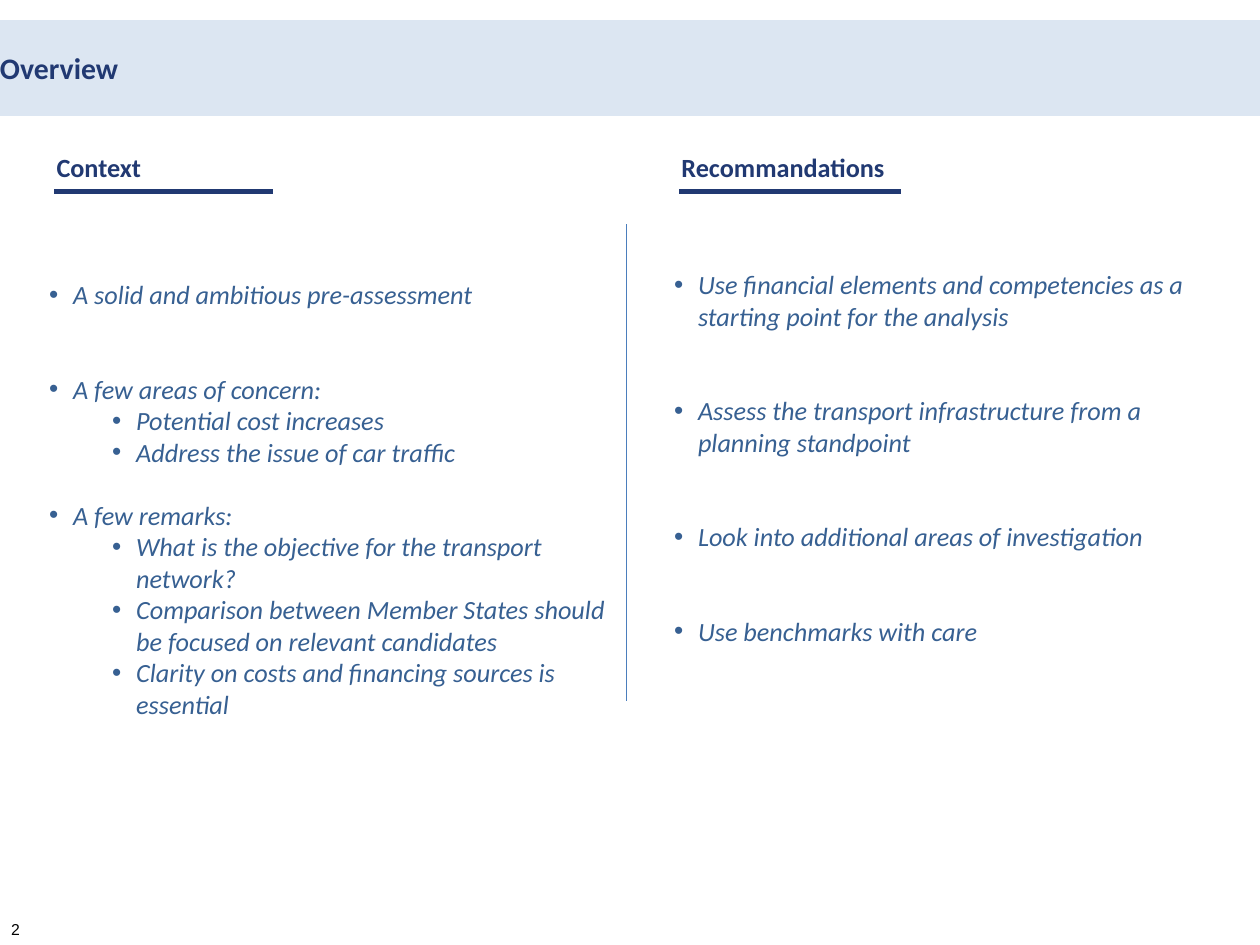
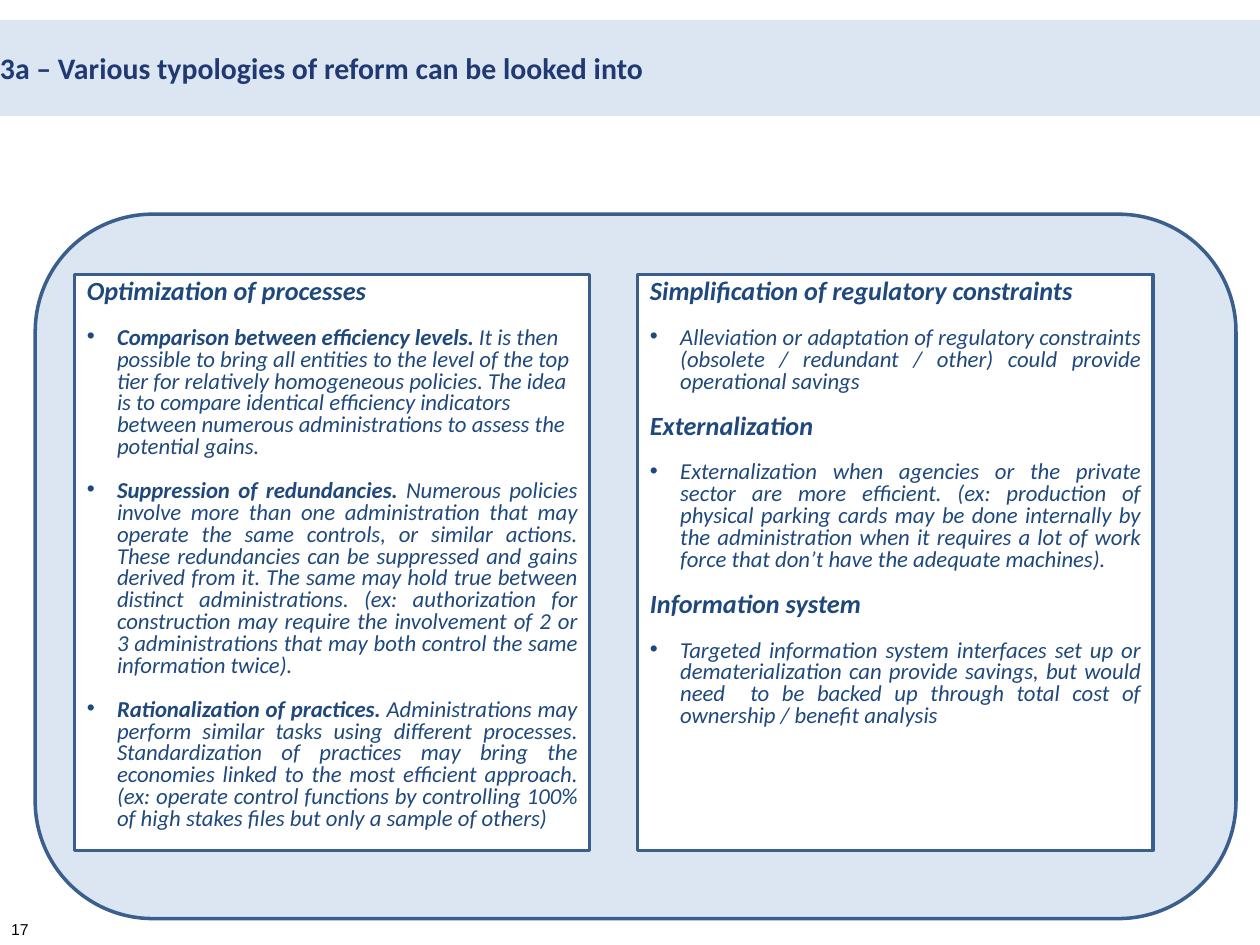
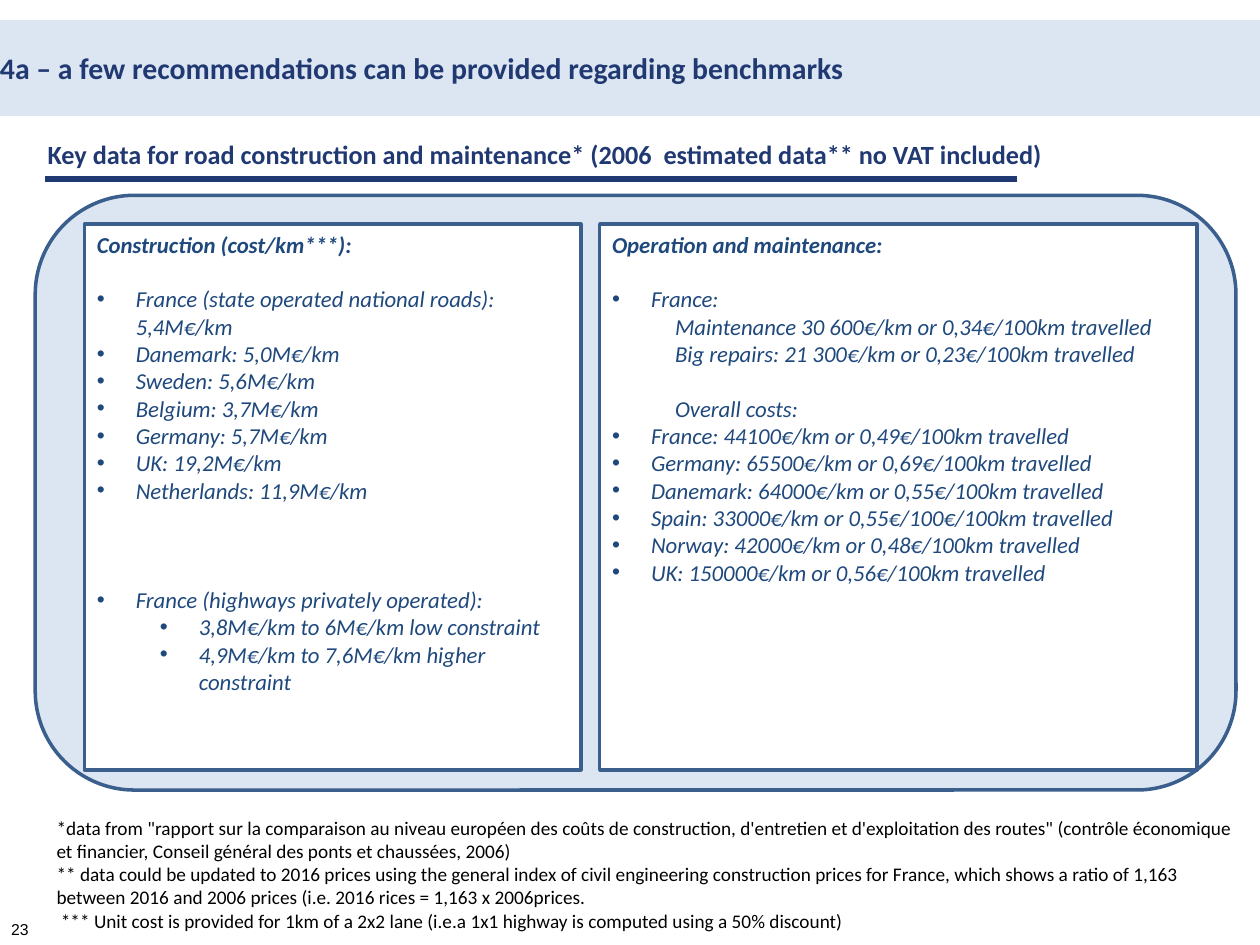
from lxml import etree
from pptx import Presentation
from pptx.dml.color import RGBColor
from pptx.enum import shapes, text
from pptx.oxml.ns import qn
from pptx.util import Inches, Pt

NAVY = RGBColor(0x21, 0x39, 0x72)
PALE_BLUE = RGBColor(0xDC, 0xE6, 0xF2)
OUTLINE = RGBColor(0x3A, 0x5F, 0x8C)
DIVIDER = RGBColor(0x4B, 0x7E, 0xBC)
LIST_BLUE = RGBColor(0x37, 0x60, 0x92)
CARD_BLUE = RGBColor(0x1F, 0x49, 0x7D)
WHITE = RGBColor(0xFF, 0xFF, 0xFF)
BLACK = RGBColor(0, 0, 0)

LINE_HEIGHT = 1.2  # line pitch as a multiple of the font size

# Paragraph kinds: left margin, first-line indent, bullet
PLAIN = (0, 0, False)
INDENTED = (0.5, 0, False)
LIST_ITEM = (0.19, -0.19, True)
LIST_SUBITEM = (0.69, -0.19, True)
REFORM_ITEM = (0.24, -0.24, True)
COST_ITEM = (0.31, -0.31, True)
COST_SUBITEM = (0.81, -0.31, True)

# Paragraphs: kind, text, empty lines above.
CONTEXT = [
    (LIST_ITEM, "A solid and ambitious pre-assessment", 0),
    (LIST_ITEM, "A few areas of concern:", 2),
    (LIST_SUBITEM, "Potential cost increases", 0),
    (LIST_SUBITEM, "Address the issue of car traffic", 0),
    (LIST_ITEM, "A few remarks:", 1),
    (LIST_SUBITEM, "What is the objective for the transport network?", 0),
    (LIST_SUBITEM, "Comparison between Member States should be focused on relevant candidates", 0),
    (LIST_SUBITEM, "Clarity on costs and financing sources is essential", 0),
]
RECOMMENDATIONS = [
    (LIST_ITEM, "Use financial elements and competencies as a starting point for the analysis", 0),
    (LIST_ITEM, "Assess the transport infrastructure from a planning standpoint", 2),
    (LIST_ITEM, "Look into additional areas of investigation", 2),
    (LIST_ITEM, "Use benchmarks with care", 2),
]
# Overview columns: heading, left, heading width, rule end, list top, list size, list
OVERVIEW_COLUMNS = [
    ("Context", 0.35, 0.88, 2.17, 1.67, (4.62, 5.23), CONTEXT),
    ("Recommandations", 5.31, 1.83, 7.15, 1.59, (4.33, 2.14), RECOMMENDATIONS),
]

# A bar separates a bold lead from the rest of its paragraph.
PROCESSES = [
    (PLAIN, "Optimization of processes", 0),
    (REFORM_ITEM, "Comparison between efficiency levels.| It is then possible to bring all "
     "entities to the level of the top tier for relatively homogeneous policies. The idea is to "
     "compare identical efficiency indicators between numerous administrations to assess the "
     "potential gains.", 1),
    (REFORM_ITEM, "Suppression of redundancies.| Numerous policies involve more than one "
     "administration that may operate the same controls, or similar actions. These redundancies "
     "can be suppressed and gains derived from it. The same may hold true between distinct "
     "administrations. (ex: authorization for construction may require the involvement of 2 or 3 "
     "administrations that may both control the same information twice).", 1),
    (REFORM_ITEM, "Rationalization of practices.| Administrations may perform similar tasks using "
     "different processes. Standardization of practices may bring the economies linked to the most "
     "efficient approach. (ex: operate control functions by controlling 100% of high stakes files "
     "but only a sample of others)", 1),
]
CONSTRAINTS = [
    (PLAIN, "Simplification of regulatory constraints", 0),
    (REFORM_ITEM, "Alleviation or adaptation of regulatory constraints (obsolete / redundant / "
     "other) could provide operational savings", 1),
    (PLAIN, "Externalization", 1),
    (REFORM_ITEM, "Externalization when agencies or the private sector are more efficient. (ex: "
     "production of physical parking cards may be done internally by the administration when it "
     "requires a lot of work force that don’t have the adequate machines).", 1),
    (PLAIN, "Information system", 1),
    (REFORM_ITEM, "Targeted information system interfaces set up or dematerialization can provide "
     "savings, but would need  to be backed up through total cost of ownership / benefit "
     "analysis", 1),
]

CONSTRUCTION = [
    (PLAIN, "Construction (cost/km***):", 0),
    (COST_ITEM, "France (state operated national roads): 5,4M€/km", 1),
    (COST_ITEM, "Danemark: 5,0M€/km", 0),
    (COST_ITEM, "Sweden: 5,6M€/km", 0),
    (COST_ITEM, "Belgium: 3,7M€/km", 0),
    (COST_ITEM, "Germany: 5,7M€/km", 0),
    (COST_ITEM, "UK: 19,2M€/km", 0),
    (COST_ITEM, "Netherlands: 11,9M€/km", 0),
    (COST_ITEM, "France (highways privately operated):", 3),
    (COST_SUBITEM, "3,8M€/km to 6M€/km low constraint", 0),
    (COST_SUBITEM, "4,9M€/km to 7,6M€/km higher constraint", 0),
]
MAINTENANCE = [
    (PLAIN, "Operation and maintenance:", 0),
    (COST_ITEM, "France:", 1),
    (INDENTED, "Maintenance 30 600€/km or 0,34€/100km travelled", 0),
    (INDENTED, "Big repairs: 21 300€/km or 0,23€/100km travelled", 0),
    (INDENTED, "Overall costs:", 1),
    (COST_ITEM, "France: 44100€/km or 0,49€/100km travelled", 0),
    (COST_ITEM, "Germany: 65500€/km or 0,69€/100km travelled", 0),
    (COST_ITEM, "Danemark: 64000€/km or 0,55€/100km travelled", 0),
    (COST_ITEM, "Spain: 33000€/km or 0,55€/100€/100km travelled", 0),
    (COST_ITEM, "Norway: 42000€/km or 0,48€/100km travelled", 0),
    (COST_ITEM, "UK: 150000€/km or 0,56€/100km travelled", 0),
]
FOOTNOTES = [
    (PLAIN, "*data from \"rapport sur la comparaison au niveau européen des coûts de construction, "
     "d'entretien et d'exploitation des routes\" (contrôle économique et financier, Conseil "
     "général des ponts et chaussées, 2006)", 0),
    (PLAIN, "** data could be updated to 2016 prices using the general index of civil engineering "
     "construction prices for France, which shows a ratio of 1,163 between 2016 and 2006 prices "
     "(i.e. 2016 rices = 1,163 x 2006prices.", 0),
    (PLAIN, " *** Unit cost is provided for 1km of a 2x2 lane (i.e.a 1x1 highway is computed using "
     "a 50% discount)", 0),
]


def style_font(font, size, color, bold=False, italic=False, name="Calibri"):
    font.name, font.size, font.bold, font.italic = name, Pt(size), bold, italic
    font.color.rgb = color


def add_panel(slide, kind, box, fill, outline=None):
    shape = slide.shapes.add_shape(kind, *map(Inches, box))
    shape.shadow.inherit = False
    shape.fill.solid()
    shape.fill.fore_color.rgb = fill
    if outline is None:
        shape.line.fill.background()
    else:
        shape.line.color.rgb = outline
        shape.line.width = Pt(2)
    return shape


def add_text(slide, box, wrap=True):
    shape = slide.shapes.add_textbox(*map(Inches, box))
    shape.text_frame.word_wrap = wrap
    return shape


def add_line(slide, start, end, color, width):
    line = slide.shapes.add_connector(
        shapes.MSO_CONNECTOR.STRAIGHT, *map(Inches, start + end))
    line.line.color.rgb = color
    line.line.width = Pt(width)
    etree.SubElement(line._element.spPr, qn("a:effectLst"))


def indent_paragraph(paragraph, kind):
    margin, first_line, bulleted = kind
    properties = paragraph._p.get_or_add_pPr()
    properties.set("marL", str(Inches(margin)))
    properties.set("indent", str(Inches(first_line)))
    if bulleted:
        etree.SubElement(properties, qn("a:buFont")).set("typeface", "Arial")
        etree.SubElement(properties, qn("a:buChar")).set("char", "•")


def write_paragraphs(shape, items, size, color, italic=True, heading_size=None,
                     spacing=1.0, justify=False):
    """Write items; plain ones become bold headings when heading_size is given."""
    frame = shape.text_frame
    frame.word_wrap = True
    frame.vertical_anchor = text.MSO_ANCHOR.TOP
    for number, (kind, content, gap) in enumerate(items):
        paragraph = frame.paragraphs[0] if number == 0 else frame.add_paragraph()
        lead, bar, rest = content.partition("|")
        heading = heading_size is not None and kind == PLAIN
        paragraph.alignment = text.PP_ALIGN.JUSTIFY if justify else text.PP_ALIGN.LEFT
        paragraph.line_spacing = spacing
        paragraph.space_before = Pt(gap * size * LINE_HEIGHT * spacing)
        paragraph.space_after = Pt(0)
        indent_paragraph(paragraph, kind)
        style_font(paragraph.font, heading_size if heading else size, color, heading, italic)
        paragraph.add_run().text = lead
        if bar:
            paragraph.runs[0].font.bold = True
            paragraph.add_run().text = rest


def add_underlined_heading(slide, heading, left, top, width, rule_end):
    shape = add_text(slide, (left, top, width, 0.35), wrap=False)
    paragraph = shape.text_frame.paragraphs[0]
    paragraph.text = heading
    style_font(paragraph.font, 15, NAVY, bold=True)
    rule_top = top + 0.37
    rule_start = left + 0.08
    add_line(slide, (rule_start, rule_top), (rule_end, rule_top), NAVY, 3)


def add_base_slide(presentation, title, number):
    slide = presentation.slides.add_slide(presentation.slide_layouts[6])
    band = add_panel(slide, shapes.MSO_SHAPE.RECTANGLE, (0, 0.16, 10, 0.76), PALE_BLUE)
    frame = band.text_frame
    frame.margin_left = frame.margin_right = frame.margin_top = frame.margin_bottom = 0
    frame.vertical_anchor = text.MSO_ANCHOR.MIDDLE
    paragraph = frame.paragraphs[0]
    paragraph.text = title
    paragraph.alignment = text.PP_ALIGN.LEFT
    style_font(paragraph.font, 17, NAVY, bold=True)

    footer = add_text(slide, (-0.01, 7.13, 0.48, 0.37))
    footer.text_frame.vertical_anchor = text.MSO_ANCHOR.BOTTOM
    paragraph = footer.text_frame.paragraphs[0]
    paragraph.text = str(number)
    style_font(paragraph.font, 9, BLACK, name="Arial")
    return slide


def add_frame(slide, top, height):
    add_panel(slide, shapes.MSO_SHAPE.ROUNDED_RECTANGLE, (0.28, top, 9.53, height),
              PALE_BLUE, OUTLINE)


def add_card(slide, box, items, **style):
    card = add_panel(slide, shapes.MSO_SHAPE.RECTANGLE, box, WHITE, OUTLINE)
    write_paragraphs(card, items, 13, CARD_BLUE, **style)
    return card


def build_overview(presentation):
    slide = add_base_slide(presentation, "Overview", 2)
    for heading, left, width, rule_end, top, size, items in OVERVIEW_COLUMNS:
        add_underlined_heading(slide, heading, left, 1.15, width, rule_end)
        column = add_text(slide, (left, top) + size)
        frame = column.text_frame
        frame.margin_left = frame.margin_right = frame.margin_bottom = Inches(0.04)
        frame.margin_top = Inches(0.54)
        write_paragraphs(column, items, 15, LIST_BLUE)
    add_line(slide, (4.97, 1.78), (4.97, 5.56), DIVIDER, 0.75)


def build_reforms(presentation):
    slide = add_base_slide(
        presentation, "3a – Various typologies of reform can be looked into", 17)
    add_frame(slide, 1.7, 5.59)
    for left, items in ((0.59, PROCESSES), (5.06, CONSTRAINTS)):
        card = add_card(slide, (left, 2.18, 4.09, 4.57), items,
                        heading_size=15, spacing=0.8, justify=True)
        if items is PROCESSES:
            card.text_frame.paragraphs[1].alignment = text.PP_ALIGN.LEFT


def build_benchmarks(presentation):
    slide = add_base_slide(
        presentation, "4a – a few recommendations can be provided regarding benchmarks", 23)
    add_frame(slide, 1.55, 4.72)
    add_underlined_heading(
        slide,
        "Key data for road construction and maintenance* (2006  estimated data** no VAT included)",
        0.28, 1.05, 8.16, 8.07)
    for left, width, items in ((0.67, 3.94, CONSTRUCTION), (4.76, 4.74, MAINTENANCE)):
        add_card(slide, (left, 1.78, width, 4.33), items, heading_size=13)
    notes = add_text(slide, (0.35, 6.43, 9.69, 1.03))
    write_paragraphs(notes, FOOTNOTES, 11, BLACK, italic=False)


def main():
    presentation = Presentation()
    presentation.slide_width, presentation.slide_height = Inches(10), Inches(7.5)
    build_overview(presentation)
    build_reforms(presentation)
    build_benchmarks(presentation)
    presentation.save("out.pptx")


if __name__ == "__main__":
    main()
